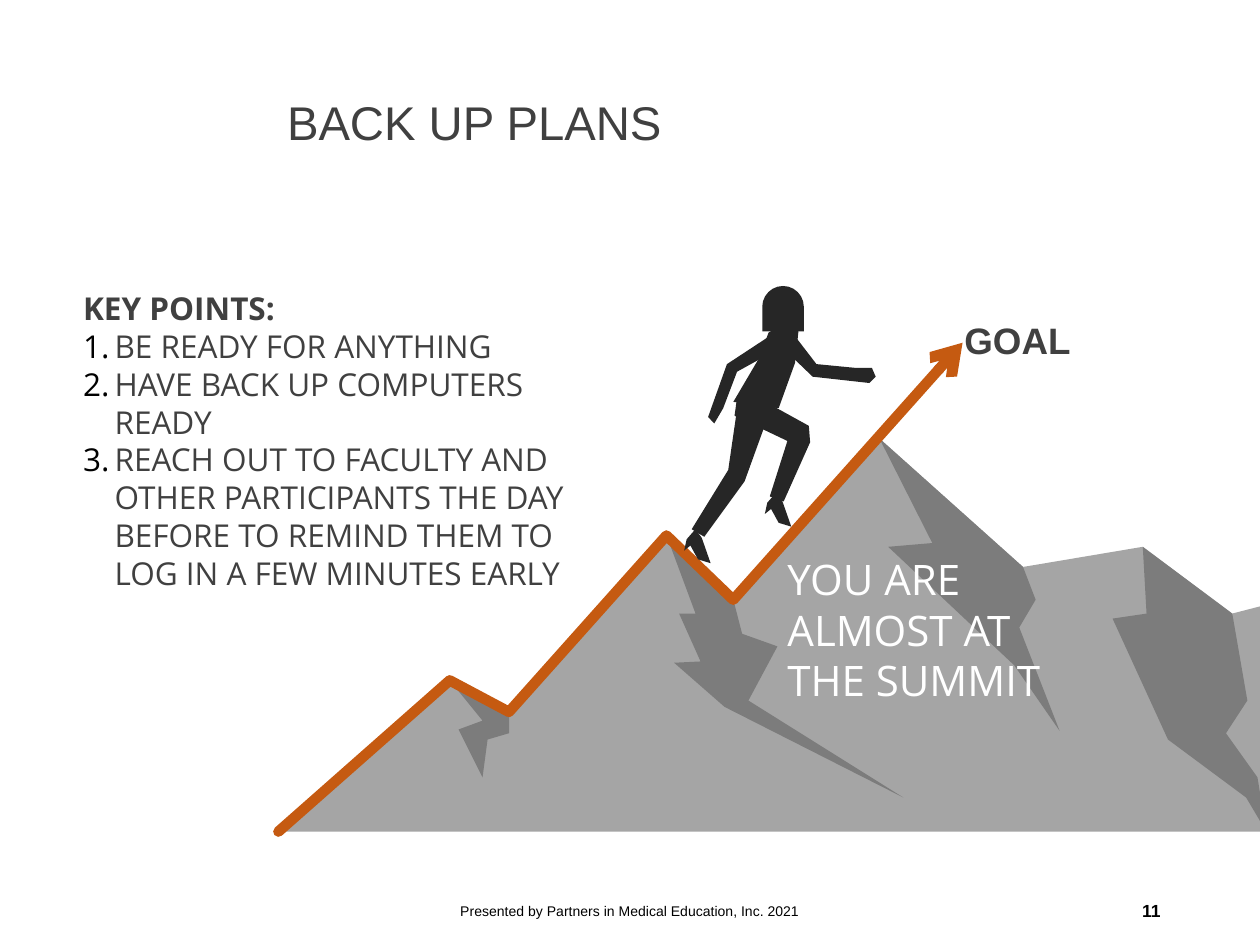
from lxml.etree import SubElement
from pptx import Presentation
from pptx.dml.color import RGBColor
from pptx.enum.shapes import MSO_SHAPE as Preset
from pptx.enum.text import MSO_ANCHOR as Anchor, MSO_AUTO_SIZE as AutoSize, PP_ALIGN as Align
from pptx.oxml.ns import qn
from pptx.util import Inches, Pt

BLACK = RGBColor(0x00, 0x00, 0x00)
WHITE = RGBColor(0xFF, 0xFF, 0xFF)
TEXT_GRAY = RGBColor(0x40, 0x40, 0x40)
CLIMBER_GRAY = RGBColor(0x26, 0x26, 0x26)
ROCK = RGBColor(0xA5, 0xA5, 0xA5)
ROCK_SHADE = RGBColor(0x7C, 0x7C, 0x7C)
ORANGE = RGBColor(0xC5, 0x5A, 0x11)

# Outlines are corner points in inches.
SLOPE = [(2.21, 6.6), (3.57, 5.4), (4.04, 5.65), (5.29, 4.25), (5.82, 4.76), (6.98, 3.48),
         (8.12, 4.5), (9.07, 4.34), (9.78, 4.87)]
MOUNTAINS = SLOPE + [(10.05, 4.8), (10.05, 6.6)]
ROUTE = SLOPE[:5] + [(7.64, 2.72)]

# Each shaded face hangs between a peak of the slope and the next point.
SHADED_FACES = {
    1: [(4.04, 5.82), (3.87, 5.87), (3.83, 6.17), (3.64, 5.79), (3.83, 5.72)],
    3: [(5.89, 5.03), (6.17, 5.13), (5.94, 5.56), (7.17, 6.33), (5.75, 5.61), (5.35, 5.26),
        (5.56, 5.25), (5.39, 4.87), (5.52, 4.87)],
    5: [(8.22, 4.76), (8.09, 4.98), (8.41, 5.8), (8.05, 5.28), (7.05, 4.34), (7.4, 4.31)],
    7: [(9.9, 5.56), (9.73, 5.82), (9.98, 6.17), (10.05, 6.6), (9.89, 6.33), (9.27, 5.87),
        (8.83, 4.91), (9.1, 4.87)],
}

TORSO = [(6.17, 2.6), (6.34, 2.6), (6.31, 2.88), (6.18, 3.24), (5.82, 3.19), (6.02, 2.85),
         (6.1, 2.64)]
FRONT_ARM = [(6.28, 2.63), (6.48, 2.89), (6.79, 2.92), (6.92, 2.92), (6.95, 2.99),
             (6.9, 3.04), (6.45, 2.99), (6.2, 2.75)]
REAR_ARM = [(6.15, 2.64), (5.77, 2.89), (5.62, 3.31), (5.67, 3.36), (5.74, 3.24),
            (5.85, 2.95), (6.14, 2.79)]
REAR_LEG = [(5.86, 3.18), (5.78, 3.73), (5.49, 4.2), (5.59, 4.26), (5.91, 3.82),
            (6.08, 3.35), (6.12, 3.17)]
FRONT_LEG = [(5.85, 3.16), (5.83, 3.3), (6.25, 3.5), (6.11, 3.94), (6.22, 3.98),
             (6.43, 3.51), (6.42, 3.38), (6.13, 3.22)]
REAR_SHOE = [(5.52, 4.2), (5.45, 4.28), (5.43, 4.37), (5.48, 4.33), (5.54, 4.44),
             (5.64, 4.47), (5.57, 4.27)]
FRONT_SHOE = [(x + 0.64, y - 0.29) for x, y in REAR_SHOE]

KEY_POINTS = [
    "BE READY FOR ANYTHING",
    "HAVE BACK UP COMPUTERS READY",
    "REACH OUT TO FACULTY AND OTHER PARTICIPANTS THE DAY BEFORE TO REMIND THEM TO "
    "LOG IN A FEW MINUTES EARLY",
]


def add_outline(shapes, outline, close=True):
    points = [(Inches(x), Inches(y)) for x, y in outline]
    builder = shapes.build_freeform(*points[0])
    builder.add_line_segments(points[1:], close=close)
    return builder.convert_to_shape()


def paint(shape, color):
    shape.shadow.inherit = False
    shape.fill.solid()
    shape.fill.fore_color.rgb = color
    shape.line.fill.background()


def add_mountains(page):
    shapes = page.shapes.add_group_shape().shapes
    paint(add_outline(shapes, MOUNTAINS), ROCK)
    for peak, edge in SHADED_FACES.items():
        paint(add_outline(shapes, SLOPE[peak:peak + 2] + edge), ROCK_SHADE)


def add_route(page):
    route = add_outline(page.shapes, ROUTE, close=False)
    route.shadow.inherit = False
    route.fill.background()
    route.line.color.rgb = ORANGE
    route.line.width = Pt(6)
    line = route.line._get_or_add_ln()
    line.set("cap", "rnd")
    SubElement(line, qn("a:round"))
    SubElement(line, qn("a:tailEnd"), type="arrow")


def add_climber(page):
    shapes = page.shapes.add_group_shape().shapes
    for part in (TORSO, FRONT_ARM, REAR_ARM, REAR_LEG, FRONT_LEG, REAR_SHOE, FRONT_SHOE):
        paint(add_outline(shapes, part), CLIMBER_GRAY)
    hair = shapes.add_shape(Preset.ROUND_2_SAME_RECTANGLE,
                            *map(Inches, (6.05, 2.27, 0.33, 0.36)))
    hair.adjustments[0] = 0.5
    paint(hair, CLIMBER_GRAY)


def add_box(page, at, inset=0.1, inset_y=0.05, anchor=Anchor.MIDDLE, wrap=True):
    frame = page.shapes.add_textbox(*map(Inches, at)).text_frame
    frame.word_wrap = wrap
    frame.auto_size = AutoSize.NONE
    frame.vertical_anchor = anchor
    frame.margin_left = frame.margin_right = Inches(inset)
    frame.margin_top = frame.margin_bottom = Inches(inset_y)
    return frame


def add_span(para, text, size, color, font="Arial", bold=False, align=Align.LEFT):
    para.alignment = align
    span = para.add_run()
    span.text = text
    span.font.size = Pt(size)
    span.font.name = font
    span.font.bold = bold
    span.font.color.rgb = color


def number(para):
    props = para._p.get_or_add_pPr()
    props.set("marL", str(Inches(0.25)))
    props.set("indent", str(-Inches(0.25)))
    SubElement(SubElement(props, qn("a:buClr")), qn("a:srgbClr"), val=str(BLACK))
    SubElement(props, qn("a:buAutoNum"), type="arabicPeriod")


def add_key_points(page):
    frame = add_box(page, (0.66, 2.23, 4.23, 2.53), inset=0)
    add_span(frame.paragraphs[0], "KEY POINTS:", 18, TEXT_GRAY, "Open Sans", bold=True)
    for point in KEY_POINTS:
        para = frame.add_paragraph()
        number(para)
        add_span(para, point, 18, TEXT_GRAY, "Open Sans")


def main():
    deck = Presentation()
    deck.slide_width, deck.slide_height = Inches(10), Inches(7.5)
    page = deck.slides.add_slide(deck.slide_layouts[6])

    title = add_box(page, (2.18, 0.27, 7.14, 1.45), inset_y=0.1).paragraphs[0]
    title.line_spacing = 0.9
    add_span(title, "BACK UP PLANS", 27, TEXT_GRAY)

    add_mountains(page)
    add_route(page)
    summit = add_box(page, (6.25, 4.34, 2.2, 1.31), inset=0).paragraphs[0]
    add_span(summit, "YOU ARE ALMOST AT THE SUMMIT", 24, WHITE, "Open Sans")
    add_key_points(page)
    goal = add_box(page, (7.55, 2.47, 1.05, 0.45), anchor=Anchor.TOP, wrap=False).paragraphs[0]
    add_span(goal, "GOAL", 21, TEXT_GRAY, bold=True, align=Align.CENTER)
    add_climber(page)

    footer = add_box(page, (3.31, 7.03, 3.38, 0.4)).paragraphs[0]
    add_span(footer, "Presented by Partners in Medical Education, Inc. 2021", 8, BLACK,
             align=Align.CENTER)
    page_number = add_box(page, (7.06, 7.03, 2.25, 0.4)).paragraphs[0]
    add_span(page_number, "11", 10, BLACK, bold=True, align=Align.RIGHT)

    deck.save("out.pptx")


if __name__ == "__main__":
    main()
